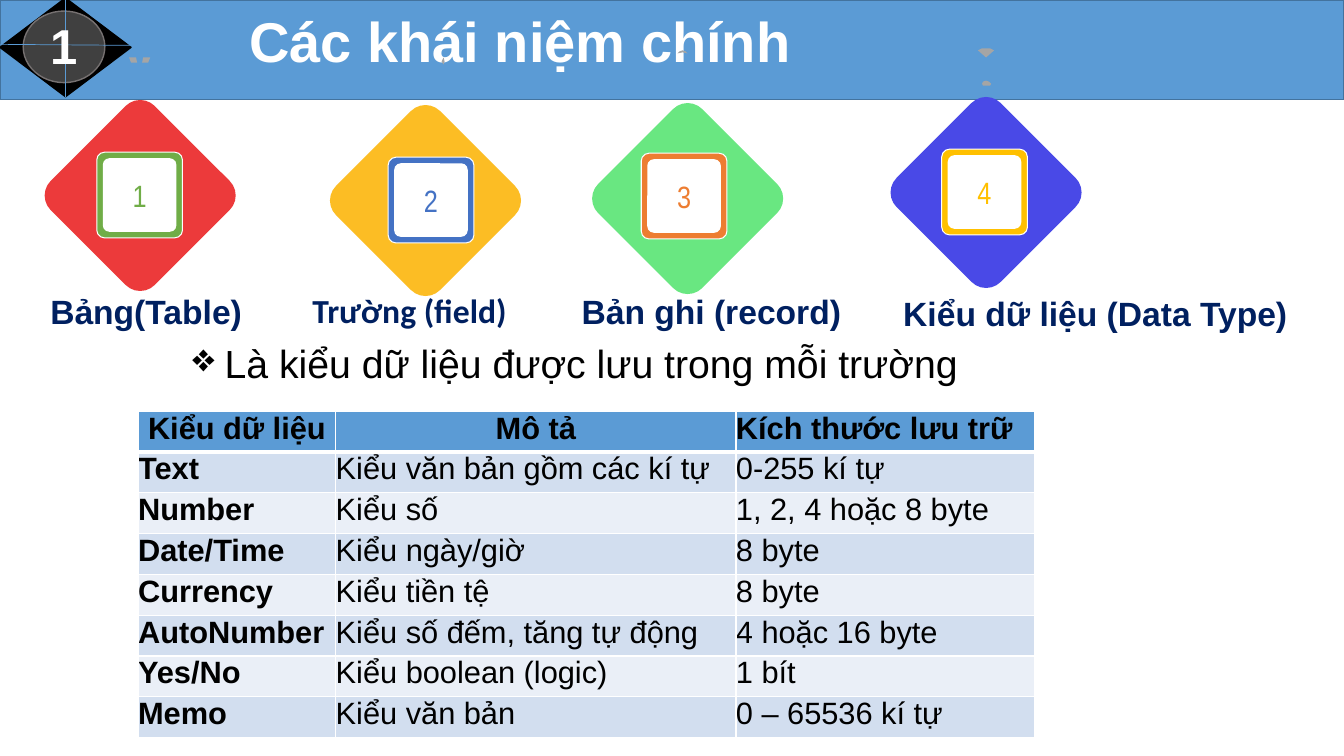
from pptx import Presentation
from pptx.dml.color import RGBColor
from pptx.enum import shapes as shp, text as txt
from pptx.oxml import parse_xml
from pptx.oxml.ns import nsdecls, qn
from pptx.util import Inches, Pt

# Content
TITLE, SECTION = " Các khái niệm chính", "1"
POINT = "Là kiểu dữ liệu được lưu trong mỗi trường"
# label, font, label box, diamond centre, badge corner, diamond and badge colours
TERMS = [
    ("Bảng(Table)", "Arial", (0.4, 2.85, 2.49), (1.39, 1.94), (0.96, 1.51), "EC3A3B", "70AD47"),
    ("Trường (field)", "Calibri", (3, 2.84, 3.12), (4.22, 1.99), (3.85, 1.56), "FCBD24", "4472C4"),
    ("Bản ghi (record)", "Arial", (5.67, 2.85, 3.36), (6.82, 1.97), (6.36, 1.52), "69E781", "ED7D31"),
    ("Kiểu dữ liệu (Data Type)", "Arial", (8.86, 2.87, 5.15), (9.78, 1.91), (9.34, 1.48), "4949E7", "FFC000"),
]
# Small grey marks on the banner
MARKS = [
    [(1.28, 0.57), (1.3, 0.62), (1.36, 0.62), (1.35, 0.57)],
    [(1.42, 0.57), (1.41, 0.62), (1.47, 0.62), (1.49, 0.57)],
    [(4.4, 0.57), (4.38, 0.61), (4.4, 0.64), (4.41, 0.61)],
    [(6.77, 0.5), (6.74, 0.51), (6.72, 0.53), (6.77, 0.52), (6.82, 0.53), (6.8, 0.51)],
    [(9.78, 0.8), (9.75, 0.81), (9.74, 0.83), (9.75, 0.85), (9.82, 0.85), (9.83, 0.83), (9.81, 0.81)],
    [(9.78, 0.48), (9.74, 0.48), (9.7, 0.5), (9.78, 0.57), (9.86, 0.5), (9.82, 0.48)],
]
DATA_TYPES = [
    ("Kiểu dữ liệu", "Mô tả", "Kích thước lưu trữ"),
    ("Text", "Kiểu văn bản gồm các kí tự", "0-255 kí tự"),
    ("Number", "Kiểu số", "1, 2, 4 hoặc 8 byte"),
    ("Date/Time", "Kiểu ngày/giờ", "8 byte"),
    ("Currency", "Kiểu tiền tệ", "8 byte"),
    ("AutoNumber", "Kiểu số đếm, tăng tự động", "4 hoặc 16 byte"),
    ("Yes/No", "Kiểu boolean (logic)", "1 bít"),
    ("Memo", "Kiểu văn bản", "0 – 65536 kí tự"),
]
COLUMNS, ROW_HEIGHT = (1.96, 3.97, 2.96), 0.405
DIAMOND, BADGE, BADGE_RIM = 1.46, 0.85, 0.06

LEFT, CENTER, RIGHT = (txt.PP_ALIGN.LEFT, txt.PP_ALIGN.CENTER, txt.PP_ALIGN.RIGHT)
MIDDLE, TOP = txt.MSO_ANCHOR.MIDDLE, txt.MSO_ANCHOR.TOP
KIND = shp.MSO_SHAPE

deck = Presentation()
deck.slide_width, deck.slide_height = Inches(13.33), Inches(7.5)
slide = deck.slides.add_slide(deck.slide_layouts[6])


def color(value):
    return RGBColor.from_string(value)


def paint(part, fill, line=None, width=1):
    part.shadow.inherit = False
    part.fill.solid()
    part.fill.fore_color.rgb = color(fill)
    if line:
        part.line.color.rgb = color(line)
        part.line.width = Pt(width)
    else:
        part.line.fill.background()


def draw(kind, box, fill, line=None, width=1, corner=None):
    part = slide.shapes.add_shape(kind, *map(Inches, box))
    paint(part, fill, line, width)
    if corner is not None:
        part.adjustments[0] = corner
    return part


def write(frame, words, size, font, ink, bold=False, align=LEFT, anchor=TOP, inset=None):
    frame.word_wrap = True
    frame.vertical_anchor = anchor
    if inset is not None:
        frame.margin_left = frame.margin_right = Inches(inset)
        frame.margin_top = frame.margin_bottom = Inches(inset)
    paragraph = frame.paragraphs[0]
    paragraph.alignment = align
    run = paragraph.add_run()
    run.text = words
    run.font.size, run.font.name, run.font.bold = Pt(size), font, bold
    run.font.color.rgb = color(ink)
    return paragraph


def text_box(box, *args, **kwargs):
    frame = slide.shapes.add_textbox(*map(Inches, box)).text_frame
    return write(frame, *args, **kwargs)


# Banner with section number
draw(KIND.RECTANGLE, (0, 0, 13.33, 0.99), "5B9BD5", "43739E")
draw(KIND.FLOWCHART_DECISION, (0, -0.02, 1.3, 0.98), "000000", "000000")
draw(KIND.OVAL, (0.23, 0.11, 0.81, 0.71), "404040", "767171")
for ends in ((0, 0.44, 1.3, 0.45), (0.65, -0.02, 0.65, 0.96)):
    crosshair = slide.shapes.add_connector(shp.MSO_CONNECTOR.STRAIGHT, *map(Inches, ends))
    crosshair.line.color.rgb = color("5B9BD5")
    crosshair.line.width = Pt(0.5)
    crosshair._element.spPr.append(parse_xml(f"<a:effectLst {nsdecls('a')}/>"))
text_box((2.22, 0.02, 6.34, 0.77), TITLE, 40, "Arial", "FFFFFF", True)
text_box((0.4, 0.1, 0.46, 0.69), SECTION, 35, "Arial", "FFFFFF", True, RIGHT)
for mark in MARKS:
    start, *rest = [(Inches(x), Inches(y)) for x, y in mark]
    outline = slide.shapes.build_freeform(*start)
    outline.add_line_segments(rest, close=True)
    paint(outline.convert_to_shape(), "A5A5A5")

# Four terms: diamond, numbered badge, label
for number, (label, font, label_at, center, badge_at, tint, accent) in enumerate(TERMS, 1):
    corner = [c - DIAMOND / 2 for c in center]
    draw(KIND.ROUNDED_RECTANGLE, (*corner, DIAMOND, DIAMOND), tint, corner=0.14).rotation = 45
    draw(KIND.ROUNDED_RECTANGLE, (*badge_at, BADGE, BADGE), accent, "FFFFFF", 0.75, 0.09)
    inner = BADGE - 2 * BADGE_RIM
    face = draw(KIND.ROUNDED_RECTANGLE, (*[c + BADGE_RIM for c in badge_at], inner, inner),
                "FFFFFF", corner=0.09)
    write(face.text_frame, str(number), 22, "Arial Narrow", accent,
          align=CENTER, anchor=MIDDLE, inset=0.1)
    text_box((*label_at, 0.47), label, 24, font, "002060", True, anchor=MIDDLE, inset=0.1)

# Bullet point
point = text_box((1.81, 3.31, 7.89, 0.57), POINT, 28, "Arial", "000000", anchor=MIDDLE)
indent = point._p.get_or_add_pPr()
indent.set("marL", str(Inches(0.32)))
indent.set("indent", str(-Inches(0.32)))
indent.append(parse_xml(f'<a:buChar {nsdecls("a")} char="❖"/>'))

# Data type table
grid = slide.shapes.add_table(len(DATA_TYPES), len(COLUMNS), Inches(1.37), Inches(4.08),
                              Inches(sum(COLUMNS)), Inches(ROW_HEIGHT * len(DATA_TYPES))).table
for column, width in zip(grid.columns, COLUMNS):
    column.width = Inches(width)
for r, values in enumerate(DATA_TYPES):
    grid.rows[r].height = Inches(ROW_HEIGHT)
    for c, value in enumerate(values):
        cell = grid.cell(r, c)
        cell.margin_left = cell.margin_right = cell.margin_top = cell.margin_bottom = 0
        write(cell.text_frame, value, 22, "Arial", "000000", r == 0 or c == 0,
              CENTER if r == 0 and c < 2 else LEFT)
        edges = cell._tc.get_or_add_tcPr()
        for side in ("lnL", "lnR", "lnT", "lnB"):
            heavy = (r, side) in ((0, "lnB"), (1, "lnT"))
            edges.append(parse_xml(
                f'<a:{side} {nsdecls("a")} w="{Pt(3 if heavy else 1)}"><a:solidFill>'
                f'<a:srgbClr val="FFFFFF"/></a:solidFill></a:{side}>'))
        cell.fill.solid()
        cell.fill.fore_color.rgb = color("5B9BD5" if r == 0 else "D2DEEF" if r % 2 else "EAEFF7")
        edges.append(edges.find(qn("a:solidFill")))

deck.save("out.pptx")
